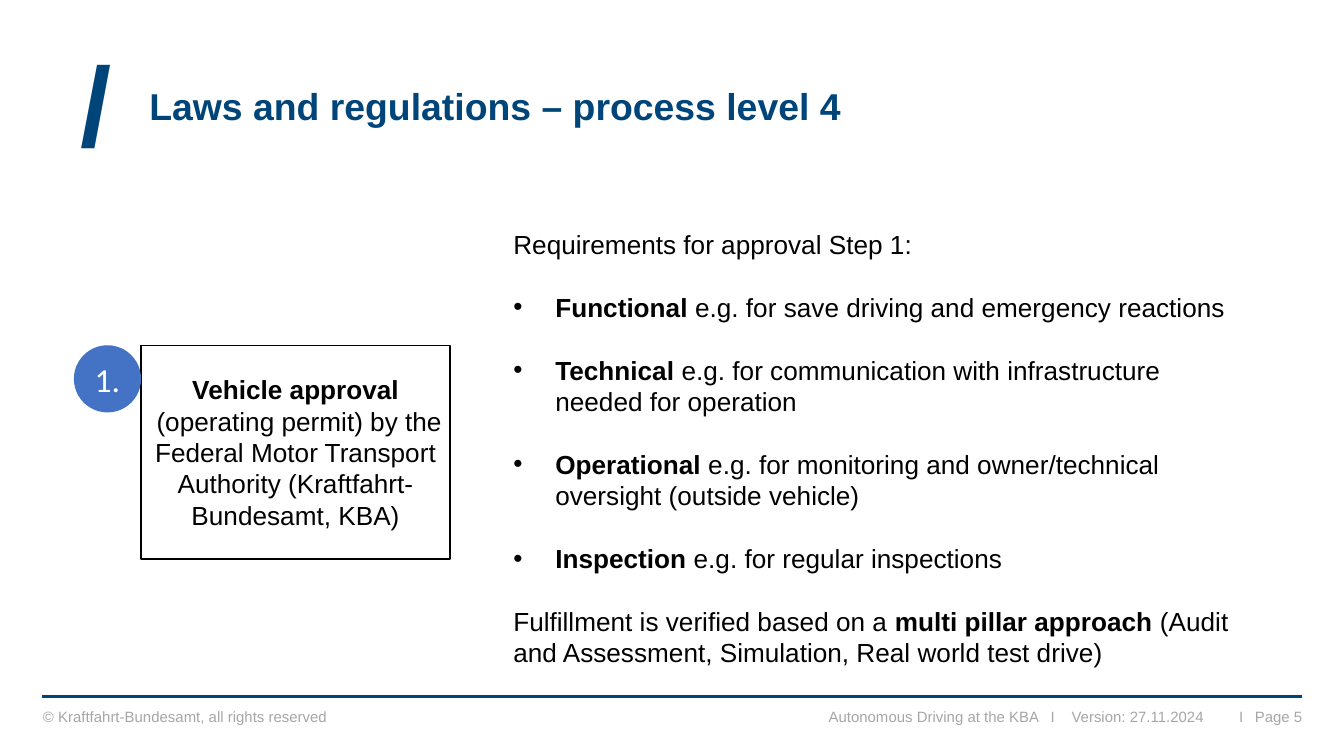
from lxml import etree
from pptx import Presentation
from pptx.dml.color import RGBColor
from pptx.enum.shapes import MSO_CONNECTOR, MSO_SHAPE
from pptx.enum.text import MSO_ANCHOR, MSO_AUTO_SIZE, PP_ALIGN
from pptx.oxml.ns import qn
from pptx.util import Pt

NAVY = RGBColor(0x00, 0x45, 0x79)
GREY = RGBColor(0xA6, 0xA6, 0xA6)
BLUE = RGBColor(0x44, 0x72, 0xC4)
BLACK = RGBColor(0, 0, 0)
WHITE = RGBColor(0xFF, 0xFF, 0xFF)

LINE_HEIGHT = 16.8
BULLET_INDENT = 22.5

# Each paragraph: bulleted or not, then (text, bold) spans
REQUIREMENTS = [
    (False, [("Requirements for approval Step 1:", False)]),
    (True, [("Functional", True),
            (" e.g. for save driving and emergency reactions", False)]),
    (True, [("Technical", True),
            (" e.g. for communication with infrastructure needed for operation", False)]),
    (True, [("Operational", True),
            (" e.g. for monitoring and owner/technical oversight (outside vehicle)", False)]),
    (True, [("Inspection", True), (" e.g. for regular inspections", False)]),
    (False, [("Fulfillment is verified based on a ", False),
             ("multi pillar approach", True),
             (" (Audit and Assessment, Simulation, Real world test drive)", False)]),
]

# Left, width, alignment, text
FOOTER = [
    (23, 220, PP_ALIGN.LEFT, "© Kraftfahrt-Bundesamt, all rights reserved"),
    (239, 318, PP_ALIGN.RIGHT, "Autonomous Driving at the KBA"),
    (562, 4, PP_ALIGN.CENTER, "I"),
    (568, 77, PP_ALIGN.RIGHT, "Version: 27.11.2024"),
    (663, 4, PP_ALIGN.CENTER, "I"),
    (668, 29.7, PP_ALIGN.RIGHT, "Page 5"),
]


def place(shape, left, top, width, height):
    shape.left, shape.top = Pt(left), Pt(top)
    shape.width, shape.height = Pt(width), Pt(height)


def set_frame(frame, anchor, inset=True):
    """Fix wrapping and anchoring; without inset, text meets the edges."""
    frame.word_wrap = True
    frame.auto_size = MSO_AUTO_SIZE.NONE
    frame.vertical_anchor = anchor
    if not inset:
        frame.margin_left = frame.margin_right = 0
        frame.margin_top = frame.margin_bottom = 0


def add_span(para, text, size, color, bold=False, font="Arial"):
    span = para.add_run()
    span.text = text
    span.font.name = font
    span.font.size = Pt(size)
    span.font.bold = bold
    span.font.color.rgb = color


def set_bullet(para, bulleted):
    props = para._p.get_or_add_pPr()
    indent = Pt(BULLET_INDENT) if bulleted else 0
    props.set("marL", str(indent))
    props.set("indent", str(-indent))
    if bulleted:
        etree.SubElement(props, qn("a:buFont"), typeface="Arial")
        etree.SubElement(props, qn("a:buChar"), char="•")
    else:
        etree.SubElement(props, qn("a:buNone"))


def add_label(page, left, top, width, height, text, size, color,
              bold=False, align=PP_ALIGN.LEFT, anchor=MSO_ANCHOR.TOP):
    box = page.shapes.add_textbox(Pt(left), Pt(top), Pt(width), Pt(height))
    set_frame(box.text_frame, anchor, inset=False)
    para = box.text_frame.paragraphs[0]
    para.alignment = align
    para.line_spacing = 0.9
    add_span(para, text, size, color, bold)


def add_footer(page):
    rule = page.shapes.add_connector(
        MSO_CONNECTOR.STRAIGHT, Pt(22.5), Pt(373), Pt(697.5), Pt(373))
    rule.line.color.rgb = NAVY
    rule.line.width = Pt(1.5)
    etree.SubElement(rule._element.spPr, qn("a:effectLst"))
    for left, width, align, text in FOOTER:
        add_label(page, left, 378.7, width, 11.5, text, 8, GREY,
                  align=align, anchor=MSO_ANCHOR.MIDDLE)


def fill_title(title):
    place(title, 80, 47.5, 615.6, 22.3)
    set_frame(title.text_frame, MSO_ANCHOR.TOP, inset=False)
    para = title.text_frame.paragraphs[0]
    para.alignment = PP_ALIGN.LEFT
    para.line_spacing = 0.9
    add_span(para, "Laws and regulations – process level 4", 20, NAVY, True)


def fill_requirements(body):
    place(body, 267.8, 118.8, 402.5, 244.8)
    frame = body.text_frame
    set_frame(frame, MSO_ANCHOR.TOP)
    for index, (bulleted, spans) in enumerate(REQUIREMENTS):
        para = frame.add_paragraph() if index else frame.paragraphs[0]
        para.line_spacing = Pt(LINE_HEIGHT)
        para.space_before = Pt(LINE_HEIGHT if index else 0)
        set_bullet(para, bulleted)
        for text, bold in spans:
            add_span(para, text, 14, BLACK, bold)


def add_block(page, kind, left, top, width, height, fill, line=None):
    """Add a filled shape and return its centred, empty paragraph."""
    block = page.shapes.add_shape(kind, Pt(left), Pt(top), Pt(width), Pt(height))
    block.shadow.inherit = False
    block.fill.solid()
    block.fill.fore_color.rgb = fill
    if line is None:
        block.line.fill.background()
    else:
        block.line.color.rgb = line
        block.line.width = Pt(0.75)
    set_frame(block.text_frame, MSO_ANCHOR.MIDDLE, inset=False)
    para = block.text_frame.paragraphs[0]
    para.alignment = PP_ALIGN.CENTER
    return para


def add_approval_step(page):
    para = add_block(page, MSO_SHAPE.RECTANGLE, 75.6, 185, 165.6, 114.5, WHITE, BLACK)
    para.line_spacing = Pt(LINE_HEIGHT)
    add_span(para, "Vehicle approval", 14, BLACK, True)
    para.add_line_break()
    add_span(para, " (operating permit) by the Federal Motor Transport "
                   "Authority (Kraftfahrt-Bundesamt, KBA)", 14, BLACK)
    number = add_block(page, MSO_SHAPE.OVAL, 39.6, 185, 36, 36, BLUE)
    add_span(number, "1.", 18, WHITE, font="Calibri")


def main():
    deck = Presentation()
    deck.slide_width, deck.slide_height = Pt(720), Pt(405)
    page = deck.slides.add_slide(deck.slide_layouts[1])
    add_footer(page)
    add_label(page, 43.2, 26.6, 30.2, 51.8, "/", 60, NAVY, True)
    fill_title(page.shapes.title)
    fill_requirements(page.placeholders[1])
    add_approval_step(page)
    deck.save("out.pptx")


if __name__ == "__main__":
    main()
